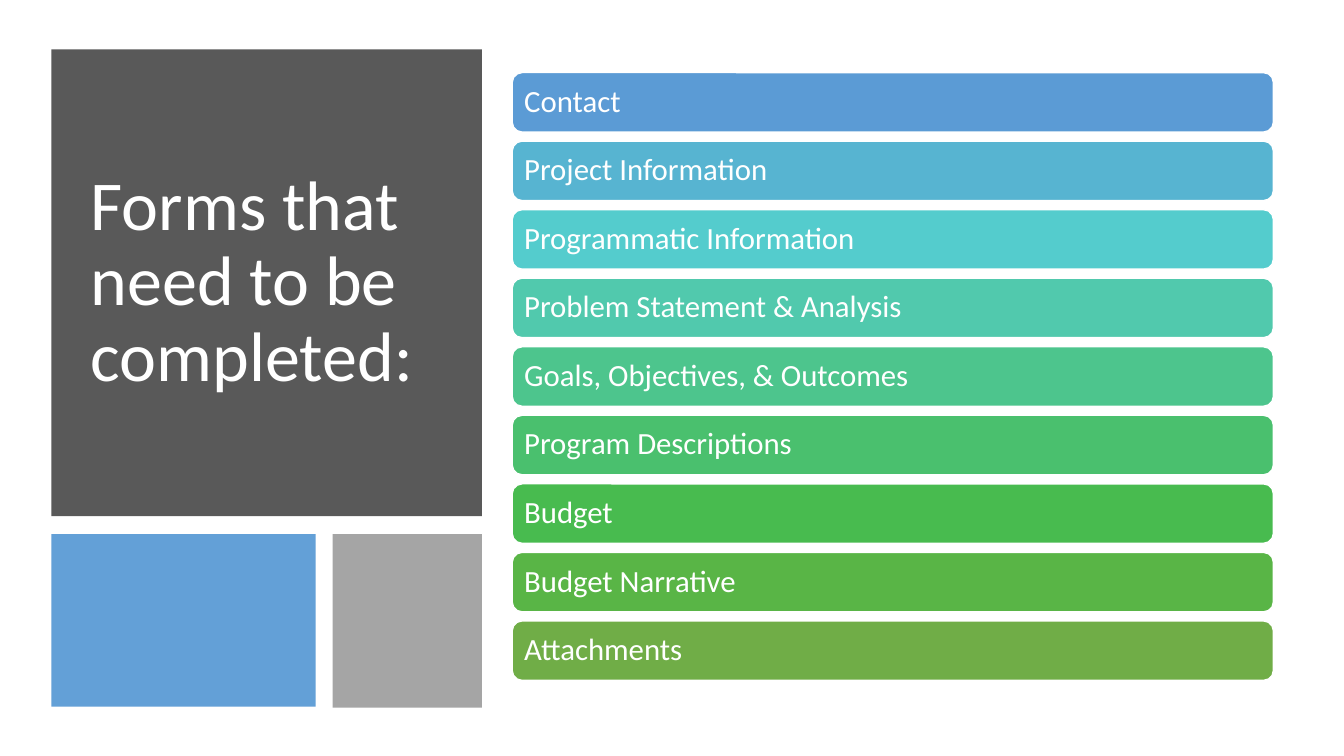
"""Build a slide that lists the forms to be completed."""
from dataclasses import dataclass

from lxml.etree import SubElement
from pptx import Presentation
from pptx.dml.color import RGBColor
from pptx.enum.shapes import MSO_SHAPE
from pptx.enum.text import MSO_ANCHOR, MSO_AUTO_SIZE, PP_ALIGN
from pptx.oxml.ns import qn
from pptx.shapes.autoshape import Shape
from pptx.slide import Slide
from pptx.util import Inches, Pt

WHITE = "FFFFFF"
BAR_TOP, BAR_PITCH = 0.72, 0.68


@dataclass
class Box:
    """A filled box, with lengths in inches and opacity in percent."""
    left: float
    top: float
    width: float
    height: float
    fill: str
    opacity: int = 100
    kind: MSO_SHAPE = MSO_SHAPE.RECTANGLE
    line: str | None = None


@dataclass
class Form:
    """A form to complete and the colour of its bar."""
    name: str
    fill: str


PANELS = [
    Box(0.51, 0.49, 4.27, 4.63, "595959"),
    Box(0.51, 5.3, 2.62, 1.71, "5B9BD5", opacity=95),
    Box(3.3, 5.3, 1.48, 1.72, "A5A5A5"),
]
FORMS = [
    Form("Contact", "5B9BD5"),
    Form("Project Information", "57B4D1"),
    Form("Programmatic Information", "54CCCD"),
    Form("Problem Statement & Analysis", "51C9AD"),
    Form("Goals, Objectives, & Outcomes", "4DC58D"),
    Form("Program Descriptions", "4AC06E"),
    Form("Budget", "48BB4F"),
    Form("Budget Narrative", "59B546"),
    Form("Attachments", "70AD47"),
]


def rgb(value: str) -> RGBColor:
    """Turn a hex string into a colour."""
    return RGBColor.from_string(value)


def write(sp: Shape, text: str, *, size: float, color: str = WHITE,
          font: str = "Calibri", inset: float = 0.1) -> None:
    """Fill a shape with one left-aligned, vertically centred paragraph."""
    tf = sp.text_frame
    tf.word_wrap = True
    tf.auto_size = MSO_AUTO_SIZE.NONE
    tf.vertical_anchor = MSO_ANCHOR.MIDDLE
    tf.margin_left = tf.margin_right = Inches(inset)
    tf.margin_top = tf.margin_bottom = Inches(0.05)
    p = tf.paragraphs[0]
    p.alignment = PP_ALIGN.LEFT
    p.line_spacing = 0.9
    r = p.add_run()
    r.text = text
    r.font.name = font
    r.font.size = Pt(size)
    r.font.color.rgb = rgb(color)


def draw_box(s: Slide, box: Box) -> Shape:
    """Draw a filled box without shadow."""
    sp = s.shapes.add_shape(box.kind, Inches(box.left), Inches(box.top),
                            Inches(box.width), Inches(box.height))
    sp.shadow.inherit = False
    sp.fill.solid()
    sp.fill.fore_color.rgb = rgb(box.fill)
    if box.opacity < 100:
        color = sp.element.spPr.find(qn("a:solidFill"))[0]
        SubElement(color, qn("a:alpha")).set("val", str(box.opacity * 1000))
    if box.line:
        sp.line.color.rgb = rgb(box.line)
        sp.line.width = Pt(1)
    else:
        sp.line.fill.background()
    return sp


def draw_title(s: Slide, text: str) -> None:
    """Place the title in front of the dark panel."""
    title = s.shapes.title
    title.left, title.top = Inches(0.8), Inches(1.02)
    title.width, title.height = Inches(3.68), Inches(3.58)
    write(title, text, size=50)
    title.element.getparent().append(title.element)


def main() -> None:
    """Build and save the slide."""
    prs = Presentation()
    prs.slide_width, prs.slide_height = Inches(13.33), Inches(7.5)
    s = prs.slides.add_slide(prs.slide_layouts[5])
    for panel in PANELS:
        draw_box(s, panel)
    draw_title(s, "Forms that need to be completed:")
    for i, form in enumerate(FORMS):
        bar = Box(5.08, BAR_TOP + i * BAR_PITCH, 7.55, 0.59, form.fill,
                  kind=MSO_SHAPE.ROUNDED_RECTANGLE, line=WHITE)
        write(draw_box(s, bar), form.name, size=22, inset=0.09)
    prs.save("out.pptx")


if __name__ == "__main__":
    main()
